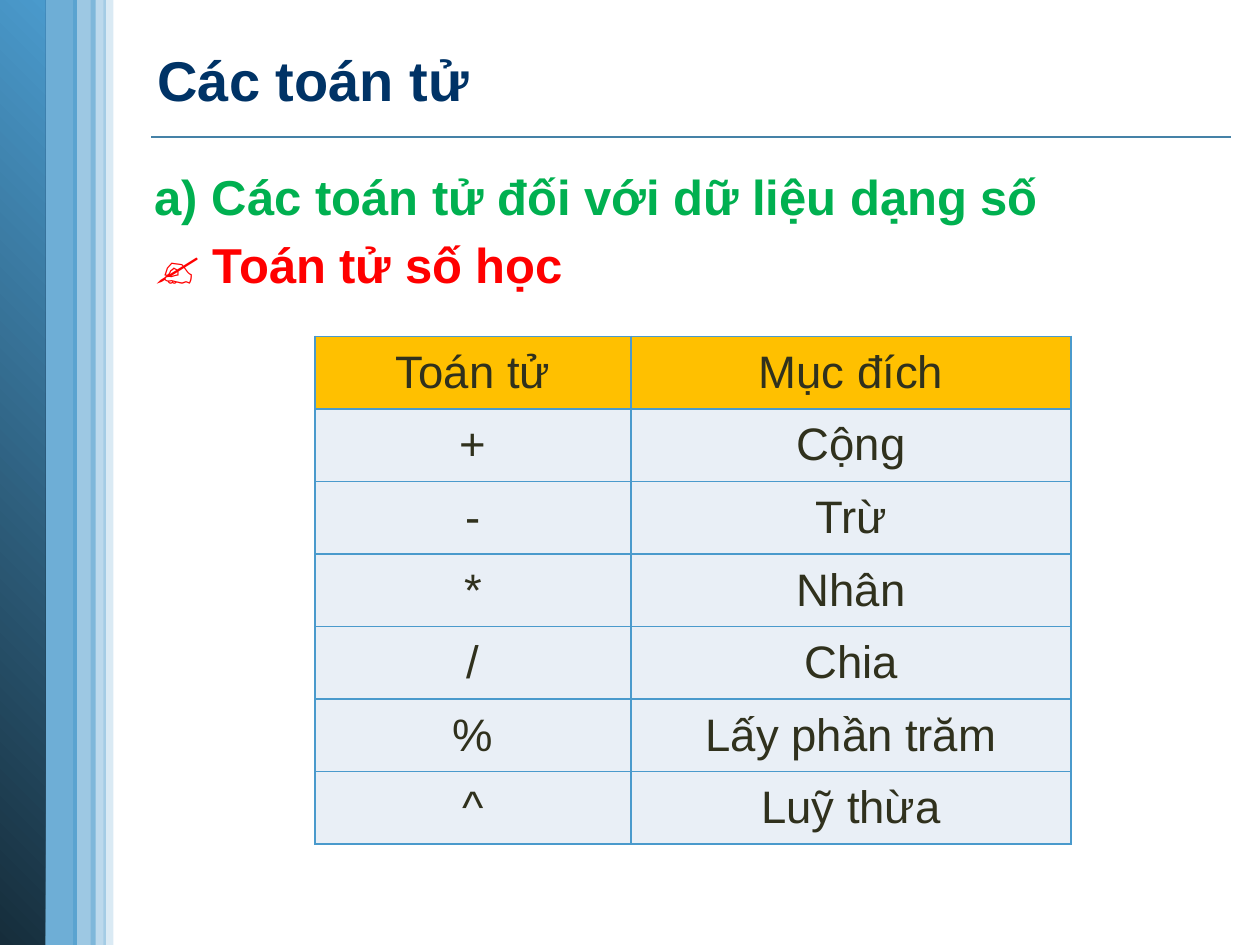
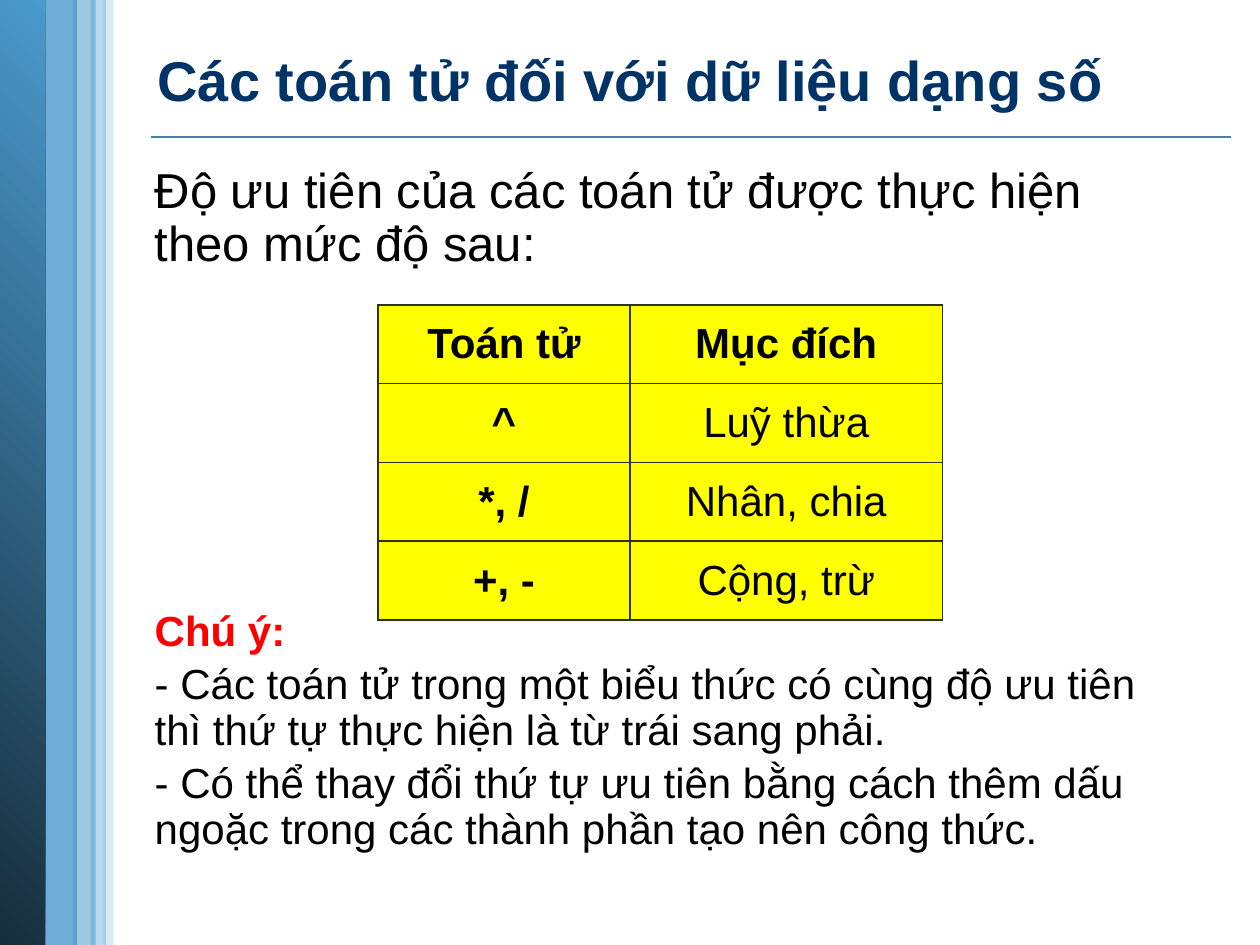
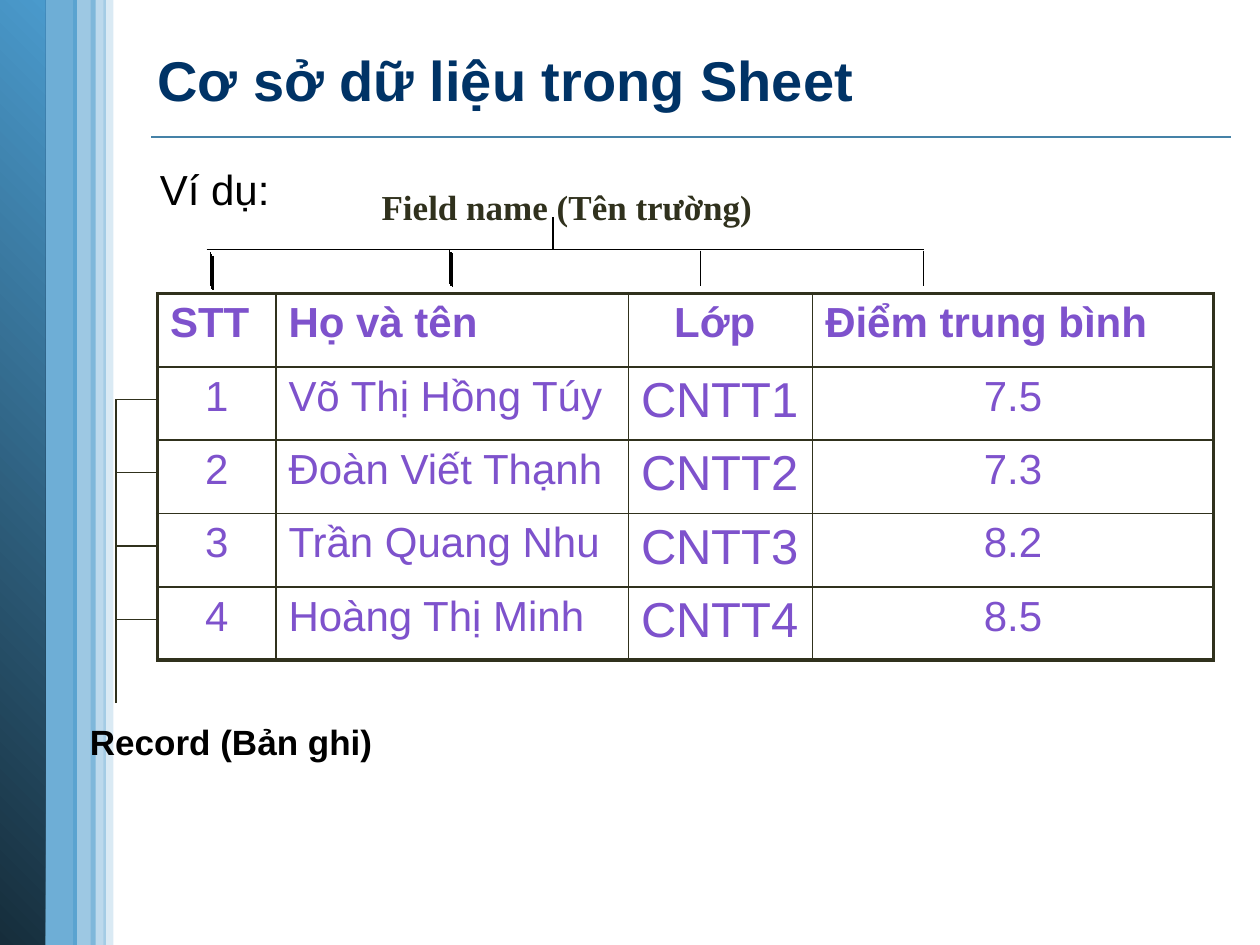
from collections import namedtuple
from dataclasses import dataclass

from lxml.etree import SubElement
from pptx import Presentation
from pptx.dml.color import RGBColor as RGB
from pptx.enum.shapes import MSO_CONNECTOR as Connector, MSO_SHAPE as Shape
from pptx.enum.text import MSO_ANCHOR as Anchor, MSO_AUTO_SIZE as AutoSize, PP_ALIGN as Align
from pptx.oxml.ns import qn
from pptx.util import Inches, Pt

Box = namedtuple("Box", "left top width height")
Style = namedtuple("Style", "size color bold font", defaults=(False, "Arial"))


@dataclass(frozen=True)
class Theme:
    blue: str = "4A9ACC"
    deep: str = "162D3B"
    rule: str = "4582A7"
    ink: str = "30311D"
    black: str = "000000"
    red: str = "FF0000"
    green: str = "00B050"
    violet: str = "7E52CC"
    navy: str = "003366"
    amber: str = "FFC000"
    pale: str = "E9EFF6"
    yellow: str = "FFFF00"
    title_size: int = 32
    large: int = 28
    table_size: int = 26
    medium: int = 24
    small: int = 20
    thin: float = 0.75
    normal: float = 1
    thick: float = 2.25


T = Theme()
PAGE = Box(0, 0, 10, 7.5)
TITLE = Box(1.15, 0.07, 8.7, 1.11)


def inches(box):
    return [Inches(value) for value in box]


def style_paragraph(paragraph, style, align=Align.LEFT):
    paragraph.alignment = align
    for run in paragraph.runs:
        run.font.size = Pt(style.size)
        run.font.bold = style.bold
        run.font.name = style.font
        run.font.color.rgb = RGB.from_string(style.color)


def add_line(slide, start, end, color=T.black, width=T.thin):
    line = slide.shapes.add_connector(Connector.STRAIGHT, *inches(start + end))
    line.line.color.rgb = RGB.from_string(color)
    line.line.width = Pt(width)
    SubElement(line.element.spPr, qn("a:effectLst"))
    return line


def add_band(slide, box, opacity=None):
    band = slide.shapes.add_shape(Shape.RECTANGLE, *inches(box))
    band.shadow.inherit = False
    band.line.fill.background()
    if opacity is None:
        band.fill.gradient()
        band.fill.gradient_angle = 45
        for stop, color in zip(band.fill.gradient_stops, (T.deep, T.blue)):
            stop.color.rgb = RGB.from_string(color)
    else:
        band.fill.solid()
        band.fill.fore_color.rgb = RGB.from_string(T.blue)
        for color in band.element.iter(qn("a:srgbClr")):
            SubElement(color, qn("a:alpha"), val=str(opacity * 1000))
    return band


def decorate_layout(layout, slide):
    for placeholder in list(layout.placeholders):
        if placeholder.placeholder_format.idx >= 10:
            placeholder.element.getparent().remove(placeholder.element)
    decorations = [add_line(slide, (1.2, 1.09), (9.77, 1.09), T.rule, T.normal)]
    for left, width, opacity in (
        (0.3, 0.31, 80),
        (0, 0.36, None),
        (0.82, 0.08, 20),
        (0.58, 0.18, 54),
        (0.72, 0.12, 37),
    ):
        decorations.append(add_band(slide, Box(left, PAGE.top, width, PAGE.height), opacity))
    for decoration in decorations:
        layout.shapes.element.append(decoration.element)


def add_titled_slide(prs, heading):
    slide = prs.slides.add_slide(prs.slide_layouts[5])
    title = slide.shapes.title
    title.left, title.top, title.width, title.height = inches(TITLE)
    frame = title.text_frame
    frame.text = heading
    frame.auto_size = AutoSize.NONE
    frame.vertical_anchor = Anchor.MIDDLE
    style_paragraph(frame.paragraphs[0], Style(T.title_size, T.navy, True))
    return slide


def add_text(slide, box, lines, align=Align.LEFT, spacing=1.0):
    frame = slide.shapes.add_textbox(*inches(box)).text_frame
    frame.word_wrap = True
    for index, (text, style) in enumerate(lines):
        paragraph = frame.add_paragraph() if index else frame.paragraphs[0]
        paragraph.text = text
        paragraph.line_spacing = spacing
        if index:
            paragraph.space_before = Pt(style.size * 0.2)
        style_paragraph(paragraph, style, align)


def set_borders(cell, color, widths):
    properties = cell._tc.get_or_add_tcPr()
    for side, width in zip("LRTB", widths):
        border = SubElement(properties, qn(f"a:ln{side}"), w=str(Pt(width)))
        SubElement(SubElement(border, qn("a:solidFill")), qn("a:srgbClr"), val=color)


def add_grid(slide, box, columns, rows, look, border, frame_width=T.normal, anchor=Anchor.MIDDLE):
    table = slide.shapes.add_table(len(rows), len(columns), *inches(box)).table
    table.first_row = table.horz_banding = False
    for column, width in zip(table.columns, columns):
        column.width = Inches(width)
    for row in table.rows:
        row.height = Inches(box.height / len(rows))
    last_row, last_column = len(rows) - 1, len(columns) - 1
    for r, values in enumerate(rows):
        for c, value in enumerate(values):
            cell = table.cell(r, c)
            edges = (c == 0, c == last_column, r == 0, r == last_row)
            set_borders(cell, border, [frame_width if edge else T.normal for edge in edges])
            style, fill, align = look(r, c)
            if fill:
                cell.fill.solid()
                cell.fill.fore_color.rgb = RGB.from_string(fill)
            else:
                cell.fill.background()
            cell.vertical_anchor = anchor
            cell.text_frame.text = value
            style_paragraph(cell.text_frame.paragraphs[0], style, align)


def arithmetic_look(r, c):
    return Style(T.table_size, T.ink), T.pale if r else T.amber, Align.CENTER


def priority_look(r, c):
    return Style(T.medium, T.black, r == 0 or c == 0), T.yellow, Align.CENTER


def student_look(r, c):
    centered = c == 2 if r == 0 else c in (0, 3)
    size = T.large if r and c == 2 else T.medium
    return Style(size, T.violet, r == 0), None, Align.CENTER if centered else Align.LEFT


def arithmetic_slide(slide, body):
    add_text(slide, body, [
        ("a) Các toán tử đối với dữ liệu dạng số", Style(T.large, T.green, True)),
        ("✍ Toán tử số học", Style(T.large, T.red, True)),
    ])
    operators = [
        ("Toán tử", "Mục đích"),
        ("+", "Cộng"),
        ("-", "Trừ"),
        ("*", "Nhân"),
        ("/", "Chia"),
        ("%", "Lấy phần trăm"),
        ("^", "Luỹ thừa"),
    ]
    grid = Box(body.left + 1.37, body.top + 1.4, 6, 4.03)
    add_grid(slide, grid, (2.51, 3.49), operators, arithmetic_look, T.blue)


def priority_slide(slide, body):
    plain = Style(T.medium, T.black)
    add_text(slide, body._replace(height=1.1), [
        ("Độ ưu tiên của các toán tử được thực hiện theo mức độ sau:", Style(T.large, T.black)),
    ], spacing=0.9)
    add_text(slide, Box(body.left, body.top + 3.52, body.width, 2.34), [
        ("Chú ý:", Style(T.medium, T.red, True)),
        ("- Các toán tử trong một biểu thức có cùng độ ưu tiên thì thứ tự thực hiện là từ trái sang phải.", plain),
        ("- Có thể thay đổi thứ tự ưu tiên bằng cách thêm dấu ngoặc trong các thành phần tạo nên công thức.", plain),
    ], spacing=0.9)
    priorities = [
        ("Toán tử", "Mục đích"),
        ("^", "Luỹ thừa"),
        ("*, /", "Nhân, chia"),
        ("+, -", "Cộng, trừ"),
    ]
    grid = Box(body.left + 1.87, body.top + 1.15, 4.48, 2.5)
    add_grid(slide, grid, (2, 2.48), priorities, priority_look, T.ink)


def field_bracket(slide, box):
    bottom = box.top + box.height
    right = box.left + box.width
    stem = box.left + 2.75
    add_line(slide, (box.left, bottom), (right, bottom))
    add_line(slide, (stem, bottom), (stem, box.top))
    for x, drops in (
        (0.03, (0.02, 0.04, 0.05)),
        (1.93, (0, 0.02, 0.03)),
        (3.92, (0.01, 0.02)),
        (5.69, (0.01, 0.02)),
    ):
        for index, drop in enumerate(drops):
            shift = 0.01 * index if len(drops) > 2 else 0
            tick, top = box.left + x + shift, bottom + drop
            add_line(slide, (tick, top), (tick, top + 0.27))
    add_text(slide, Box(box.left + 0.91, box.top - 0.3, 3.9, 0.38), [
        ("Field name (Tên trường)", Style(T.small, T.ink, True, "Times New Roman")),
    ], Align.CENTER)


def record_bracket(slide, box, count, pitch):
    bottom = box.top + box.height
    add_line(slide, (box.left, bottom), (box.left, box.top), T.ink)
    for index in range(count):
        y = box.top + index * pitch
        add_line(slide, (box.left, y), (box.left + box.width, y), T.ink)
    add_text(slide, Box(box.left - 0.42, bottom + 0.09, 2.67, 0.38), [
        ("Record (Bản ghi)", Style(T.small, T.black, True)),
    ], Align.CENTER)


def database_slide(slide, body):
    add_text(slide, body, [("Ví dụ:", Style(T.medium, T.black))])
    students = [
        ("STT", "Họ và tên", "Lớp ", "Điểm trung bình"),
        ("1", "Võ Thị Hồng Túy", "CNTT1", "7.5"),
        ("2", "Đoàn Viết Thạnh", "CNTT2", "7.3"),
        ("3", "Trần Quang Nhu", "CNTT3", "8.2"),
        ("4", "Hoàng Thị Minh", "CNTT4", "8.5"),
    ]
    grid = Box(body.left + 0.08, body.top + 1.08, 8.37, 2.91)
    add_grid(slide, grid, (0.94, 2.8, 1.46, 3.18), students, student_look, T.ink, T.thick, Anchor.TOP)
    field_bracket(slide, Box(grid.left + 0.39, grid.top - 0.61, 5.69, 0.26))
    pitch = grid.height / len(students)
    record_bracket(slide, Box(grid.left - 0.33, grid.top + 0.84, 0.33, 2.41), len(students) - 1, pitch)


def main():
    prs = Presentation()
    prs.slide_width, prs.slide_height = Inches(PAGE.width), Inches(PAGE.height)
    pages = [
        ("Các toán tử", arithmetic_slide, Box(1.13, 1.27, 8.29, 5.86)),
        ("Các toán tử đối với dữ liệu dạng số", priority_slide, Box(1.13, 1.27, 8.37, 5.86)),
        ("Cơ sở dữ liệu trong Sheet", database_slide, Box(1.17, 1.25, 4.27, 5.86)),
    ]
    for index, (heading, fill_body, body) in enumerate(pages):
        slide = add_titled_slide(prs, heading)
        if index == 0:
            decorate_layout(slide.slide_layout, slide)
        fill_body(slide, body)
    prs.save("out.pptx")


if __name__ == "__main__":
    main()
